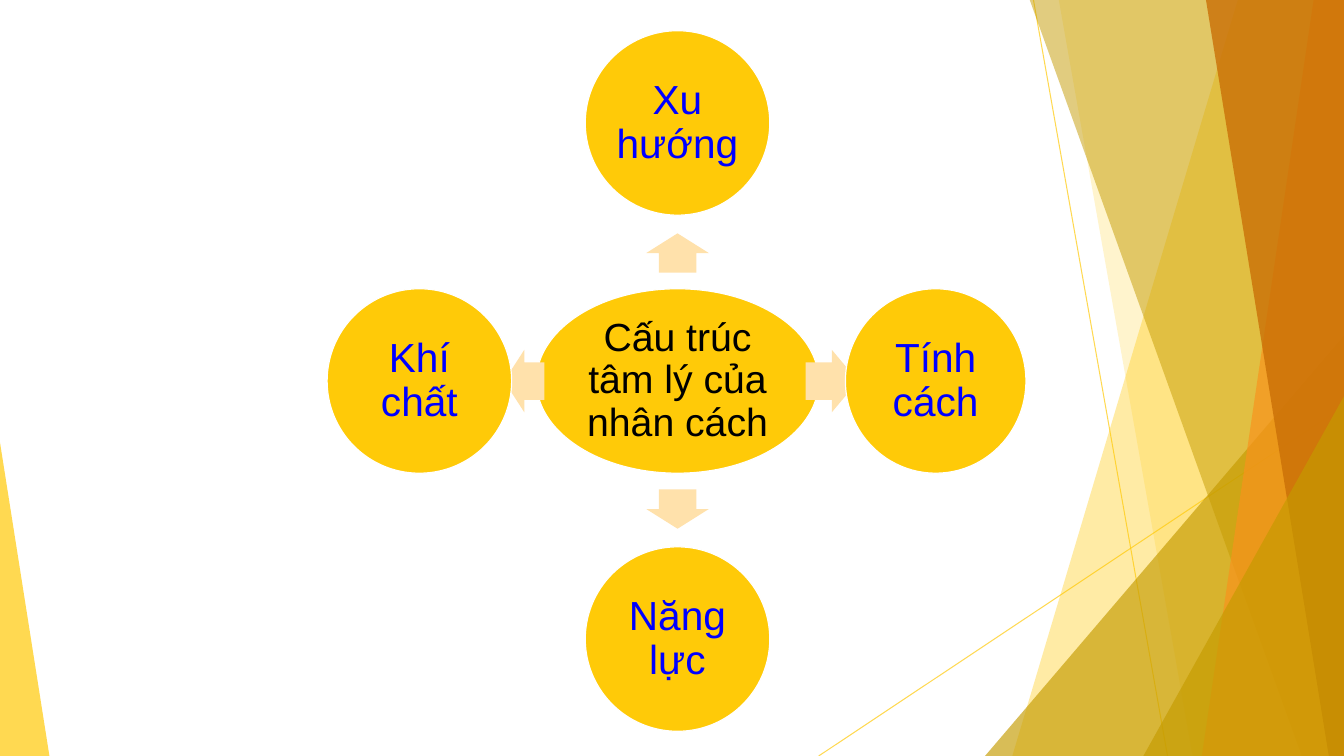
import pptx
import pptx.util
import pptx.dml.color
import pptx.enum.shapes
import pptx.enum.text
import pptx.oxml
import pptx.oxml.ns

Inches = pptx.util.Inches
Pt = pptx.util.Pt
RGB = pptx.dml.color.RGBColor.from_string
Shape = pptx.enum.shapes.MSO_SHAPE
qn = pptx.oxml.ns.qn

HUES = {
    "gold": "FFCA08", "olive": "C59B00", "orange": "F8931D", "rust": "CA6F06",
    "cream": "FFE1AB", "white": "FFFFFF", "black": "000000", "blue": "0000FF",
}

deck = pptx.Presentation()
deck.slide_width, deck.slide_height = Inches(13.33), Inches(7.5)
slide = deck.slides.add_slide(deck.slide_layouts[6])
shapes = slide.shapes


def paint(item, hue, alpha=100):
    """Fill a shape, or colour a connector, with a hue of the given opacity in percent."""
    if item.shape_type == pptx.enum.shapes.MSO_SHAPE_TYPE.LINE:
        item.line.color.rgb = RGB(HUES[hue])
        pptx.oxml.ns  # namespaces used below
        item.element.spPr.append(pptx.oxml.parse_xml(
            '<a:effectLst xmlns:a="http://schemas.openxmlformats.org/drawingml/2006/main"/>'))
    else:
        item.fill.solid()
        item.fill.fore_color.rgb = RGB(HUES[hue])
        item.line.fill.background()
        item.shadow.inherit = False
    if alpha < 100:
        tone = item.element.spPr.find(".//" + qn("a:srgbClr"))
        tone.makeelement
        mark = tone.makeelement(qn("a:alpha"), {"val": str(alpha * 1000)})
        tone.append(mark)


def label(text, x, y, wide, high=1.83, size=29, hue="blue"):
    """Draw a gold ellipse centred on x, y with its text."""
    oval = shapes.add_shape(Shape.OVAL, Inches(x - wide / 2), Inches(y - high / 2),
                            Inches(wide), Inches(high))
    paint(oval, "gold")
    oval.line.color.rgb = RGB(HUES["white"])
    oval.line.width = Pt(0.85)
    frame = oval.text_frame
    frame.word_wrap = True
    frame.vertical_anchor = pptx.enum.text.MSO_ANCHOR.MIDDLE
    frame.margin_left = frame.margin_right = Inches(0.04)
    frame.margin_top = frame.margin_bottom = Inches(0.04)
    para = frame.paragraphs[0]
    para.alignment = pptx.enum.text.PP_ALIGN.CENTER
    para.line_spacing = 0.9
    run = para.add_run()
    run.text = text
    run.font.name = "Arial"
    run.font.size = Pt(size)
    run.font.color.rgb = RGB(HUES[hue])


# Thin lines behind the facets
for ends in [(10.25, 0, 11.58, 7.5), (13.33, 4.03, 8.12, 7.5)]:
    line = shapes.add_connector(pptx.enum.shapes.MSO_CONNECTOR.STRAIGHT, *map(Inches, ends))
    line.line.width = Pt(0.75)
    paint(line, "gold", 70)

# Facets from back to front: a band gives its top and bottom left corners and runs
# to the right edge; a wedge gives its box and the place of its tip
facets = [
    ("band", (12.28, 10.04), "gold", 36),
    ("band", (10.5, 11.83), "gold", 20),
    ("wedge", (9.77, 3.33, 3.56, 4.17, 1), "olive", 66),
    ("band", (10.21, 12.91), "olive", 50),
    ("band", (13.03, 11.92), "orange", 70),
    ("band", (11.96, 13.18), "rust", 80),
    ("wedge", (11.34, 3.93, 1.99, 3.57, 1), "olive", 66),
    ("wedge", (0, 4.39, 0.49, 3.11, 0), "gold", 70),
]
for kind, place, hue, alpha in facets:
    if kind == "band":
        top, low = place
        pen = shapes.build_freeform(Inches(top), Inches(-0.01))
        pen.add_line_segments([(Inches(x), Inches(y)) for x, y in
                               [(13.33, -0.01), (13.33, 7.5), (low, 7.5)]])
        facet = pen.convert_to_shape()
    else:
        *box, tip = place
        facet = shapes.add_shape(Shape.ISOSCELES_TRIANGLE, *map(Inches, box))
        facet.adjustments[0] = tip
    paint(facet, hue, alpha)

# Hub, then each arrow with its circle, clockwise from the top
MID_X, MID_Y, STEP = 6.72, 3.78, 2.56
label("Cấu trúc tâm lý của nhân cách", MID_X, MID_Y, 2.8, size=28, hue="black")

# text, direction x and y, turn, arrow distance, arrow length, circle width
spokes = [
    ("Xu hướng", 0, -1, 270, 1.27, 0.39, 1.83),
    ("Tính cách", 1, 0, 0, 1.53, 0.52, 1.79),
    ("Năng lực", 0, 1, 90, 1.27, 0.39, 1.83),
    ("Khí chất", -1, 0, 180, 1.52, 0.4, 1.83),
]
for text, dx, dy, turn, gap, long, wide in spokes:
    arrow = shapes.add_shape(
        Shape.RIGHT_ARROW, Inches(MID_X + dx * gap - long / 2),
        Inches(MID_Y + dy * gap - 0.31), Inches(long), Inches(0.62))
    arrow.adjustments[0] = 0.6
    arrow.rotation = turn
    paint(arrow, "cream")
    label(text, MID_X + dx * STEP, MID_Y + dy * STEP, wide)

deck.save("out.pptx")
